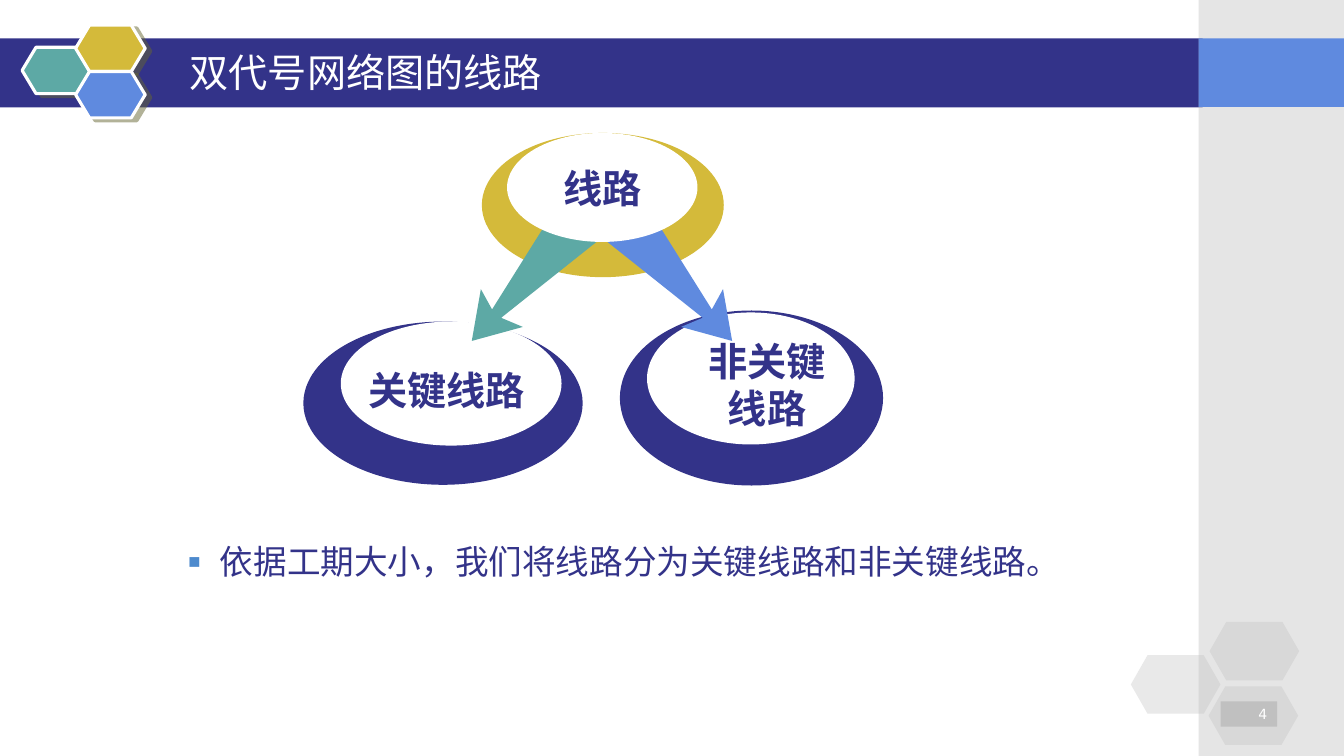
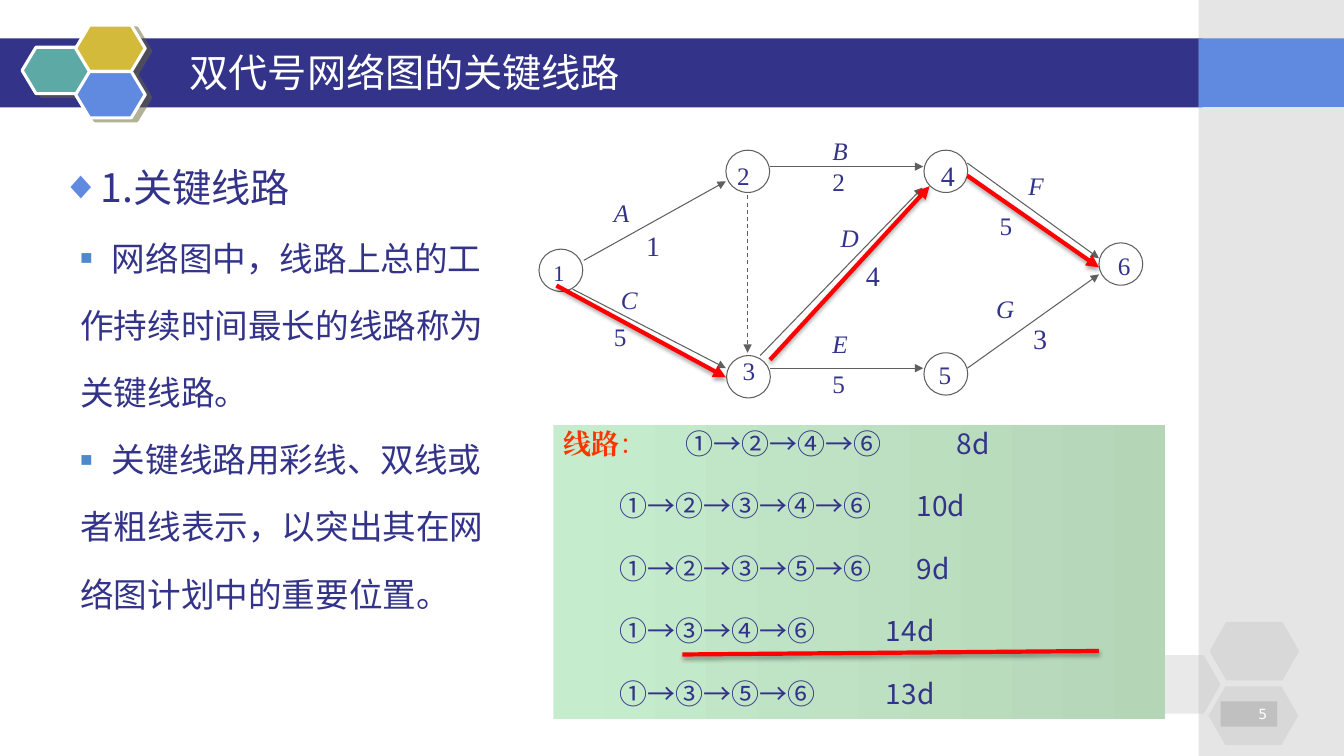
from dataclasses import dataclass

from lxml import etree
from pptx import Presentation
from pptx.dml.color import RGBColor
from pptx.enum.dml import MSO_LINE
from pptx.enum.shapes import MSO_CONNECTOR, MSO_SHAPE
from pptx.enum.text import MSO_ANCHOR, MSO_AUTO_SIZE, PP_ALIGN
from pptx.oxml.ns import qn
from pptx.util import Pt

RECTANGLE, ELLIPSE, HEXAGON = MSO_SHAPE.RECTANGLE, MSO_SHAPE.OVAL, MSO_SHAPE.HEXAGON
LEFT, CENTER, RIGHT = PP_ALIGN.LEFT, PP_ALIGN.CENTER, PP_ALIGN.RIGHT
TOP, MIDDLE = MSO_ANCHOR.TOP, MSO_ANCHOR.MIDDLE
STRAIGHT, DASH, NO_FIT = MSO_CONNECTOR.STRAIGHT, MSO_LINE.DASH, MSO_AUTO_SIZE.NONE

Point = tuple[float, float]
Box = tuple[float, float, float, float]


@dataclass(frozen=True)
class Theme:
    """Colours, fonts and type sizes of the deck."""
    navy: str = "333389"
    blue: str = "5F8ADF"
    teal: str = "5DA9A5"
    gold: str = "D4BA3A"
    white: str = "FFFFFF"
    silver: str = "C0C0C0"
    bullet: str = "4D8ACD"
    line: str = "5F5F5F"
    red: str = "FF0000"
    orange: str = "FF3300"
    panel: tuple[str, str] = ("C5EDCD", "B5D5B7")
    sans: str = "Noto Sans CJK SC"
    serif: str = "Times New Roman"
    number_font: str = "DejaVu Sans"
    heading: float = 28
    text: float = 24
    route: float = 20
    label: float = 18
    number: float = 10


THEME = Theme()


@dataclass(frozen=True)
class Shadow:
    """Outer shadow of a shape or line."""
    color: str
    alpha: int
    blur: float
    distance: float
    angle: int


HEXAGON_SHADOW = Shadow("666633", 50, 0, 4.5, 27)
LINE_SHADOW = Shadow("000000", 35, 3.1, 1.8, 90)


@dataclass(frozen=True)
class Ring:
    """Coloured ellipse with a white centre and a caption."""
    color: str
    outer: Box
    inner: Box
    caption_box: Box
    lines: tuple[str, ...]


@dataclass(frozen=True)
class Label:
    """Short text in the network."""
    text: str
    at: Point
    size: float = THEME.label
    italic: bool = False


@dataclass(frozen=True)
class Node:
    """Numbered event circle."""
    at: Point
    label: Label


@dataclass(frozen=True)
class Activity:
    """Arrow between two events with its labels."""
    start: Point
    end: Point
    labels: tuple[Label, ...] = ()
    dash: bool = False


@dataclass(frozen=True)
class Item:
    """Body paragraph with its bullet and indents."""
    text: str
    level: int = 1
    margin: float = 13.5
    indent: float = 0
    mark: str = ""


@dataclass(frozen=True)
class Route:
    """Path through the network with its length and tab stops."""
    nodes: str
    days: str
    stops: Point
    heading: str = ""


ARROW = ((403, 139), (434, 166.5), (358, 227), (373.5, 233.5), (337, 243.5),
         (343.5, 206.5), (351.5, 221))
MIRROR_SUM = 860
RINGS = (
    Ring(THEME.navy, (216.7, 229.7, 199.5, 116.6), (243.4, 229.7, 157.7, 88.6),
         (252, 257.8, 134, 41), ("关键线路",)),
    Ring(THEME.navy, (442.8, 221.8, 188, 125), (462.2, 223.2, 148.3, 94.3),
         (490.3, 237.6, 115.2, 75), ("非关键", "线路")),
    Ring(THEME.gold, (344.2, 95, 172.8, 103), (362.2, 95, 136, 77.8),
         (373.7, 113.8, 113.8, 41), ("线路",)),
)
NODES = (
    Node((385, 178), Label("1", (395.3, 185), 16)),
    Node((518.5, 107.3), Label("2", (526.5, 114.5))),
    Node((519, 254), Label("3", (530.5, 254))),
    Node((660, 107.3), Label("4", (672, 113), THEME.route)),
    Node((660, 252), Label("5", (670.5, 257))),
    Node((785, 173.5), Label("6", (798.5, 178.5))),
)
ACTIVITIES = (
    Activity((417, 186), (518.5, 129.5), (Label("A", (438.5, 141), italic=True), Label("1", (461.5, 163.5), 20))),
    Activity((550, 119), (659.5, 119), (Label("B", (594.5, 96.5), italic=True), Label("2", (594.5, 119)))),
    Activity((409, 206.5), (518.5, 263), (Label("C", (443.5, 203), italic=True), Label("5", (438.5, 229.5)))),
    Activity((543, 254), (659, 134), (Label("D", (600.5, 159), italic=True), Label("4", (618.5, 184.5), 20))),
    Activity((550, 263), (659.5, 263), (Label("E", (594.5, 234.5), italic=True), Label("5", (594.5, 263)))),
    Activity((691, 116.5), (785, 184.5), (Label("F", (734.5, 121.5), italic=True), Label("5", (714, 150.5)))),
    Activity((691, 263), (785, 196), (Label("G", (711.5, 209.5), italic=True), Label("3", (738, 229.5), 20))),
    Activity((534, 139.5), (534, 252), dash=True),
)
CRITICAL = (((397.5, 204), (518.5, 269.5)), ((550, 257), (664, 133)), ((691, 125.5), (785, 191)))
ROUTES = (
    Route("①→②→④→⑥", "8d", (87, 281), "线路"),
    Route("①→②→③→④→⑥", "10d", (40, 252.5)),
    Route("①→②→③→⑤→⑥", "9d", (40, 252.5)),
    Route("①→③→④→⑥", "14d", (40, 230.5)),
    Route("①→③→⑤→⑥", "13d", (40, 230.5)),
)
SUMMARY = (Item("依据工期大小，我们将线路分为关键线路和非关键线路。", 1, 58.5, -22.5, "■"),)
DEFINITION = (
    Item("1.关键线路", 0, 27, -27, "◆"),
    Item("网络图中，线路上总的工", 1, 36, -22.5, "■"),
    Item("作持续时间最长的线路称为"),
    Item("关键线路。"),
    Item("关键线路用彩线、双线或", 1, 36, -22.5, "■"),
    Item("者粗线表示，以突出其在网"),
    Item("络图计划中的重要位置。"),
)


def apply(target, values: dict) -> None:
    """Set every named attribute on the target."""
    for name, value in values.items():
        setattr(target, name, value)


def add_xml(parent, tag: str, **attributes):
    """Append a drawing element with its attributes."""
    return etree.SubElement(parent, qn(f"a:{tag}"), {key: str(value) for key, value in attributes.items()})


def place(shape, box: Box) -> None:
    """Move and size a shape."""
    apply(shape, dict(zip(("left", "top", "width", "height"), map(Pt, box))))


def add_shadow(effects, shadow: Shadow) -> None:
    """Put an outer shadow into an effect list."""
    outer = add_xml(effects, "outerShdw", blurRad=Pt(shadow.blur), dist=Pt(shadow.distance),
                    dir=shadow.angle * 60000, algn="ctr", rotWithShape=0)
    add_xml(add_xml(outer, "srgbClr", val=shadow.color), "alpha", val=shadow.alpha * 1000)


def paint(shape, color: str, alpha: int = 100) -> None:
    """Give a shape a flat fill without line or shadow."""
    shape.shadow.inherit = False
    shape.line.fill.background()
    shape.fill.solid()
    shape.fill.fore_color.rgb = RGBColor.from_string(color)
    if alpha < 100:
        add_xml(shape.element.spPr.find(qn("a:solidFill"))[0], "alpha", val=alpha * 1000)


def add_block(slide, kind, box: Box, color: str, alpha: int = 100):
    """Draw a filled preset shape."""
    shape = slide.shapes.add_shape(kind, *map(Pt, box))
    paint(shape, color, alpha)
    return shape


def add_span(para, text: str, size: float, color: str = THEME.navy, font: str = THEME.sans,
             bold: bool = False, italic: bool = False) -> None:
    """Add a formatted run to a paragraph."""
    span = para.add_run()
    span.text = text
    apply(span.font, {"name": font, "size": Pt(size), "bold": bold, "italic": italic})
    span.font.color.rgb = RGBColor.from_string(color)
    add_xml(span.font._element, "ea", typeface=font)


def set_frame(frame, anchor=TOP, inset: Point = (7.2, 3.6)) -> None:
    """Set wrapping, anchor and insets of a text frame."""
    across, down = map(Pt, inset)
    apply(frame, {"word_wrap": True, "auto_size": NO_FIT, "vertical_anchor": anchor,
                  "margin_left": across, "margin_right": across, "margin_top": down, "margin_bottom": down})


def add_line(slide, start: Point, end: Point, color: str = THEME.line, width: float = 0.75,
             arrow: bool = True, dash: bool = False, shadow: Shadow | None = None) -> None:
    """Draw a straight line, with an arrowhead if wanted."""
    connector = slide.shapes.add_connector(STRAIGHT, *map(Pt, start + end))
    connector.line.color.rgb = RGBColor.from_string(color)
    connector.line.width = Pt(width)
    if dash:
        connector.line.dash_style = DASH
    if arrow:
        add_xml(connector.line._get_or_add_ln(), "tailEnd", type="triangle")
    effects = add_xml(connector.element.spPr, "effectLst")
    if shadow:
        add_shadow(effects, shadow)


def build_frame(layout, slide) -> None:
    """Draw the bands and hexagons and move them to the layout."""
    add_block(slide, RECTANGLE, (0, 27.4, 859, 49.3), THEME.navy)
    add_block(slide, RECTANGLE, (856.2, 0, 103.8, 540), THEME.silver, 40)
    add_block(slide, RECTANGLE, (856.2, 27.4, 103.8, 49), THEME.blue)
    for left, top, color in ((15.8, 33.8, THEME.teal), (54, 18, THEME.gold), (54, 51.1, THEME.blue)):
        hexagon = add_block(slide, HEXAGON, (left, top, 49.7, 33.1), color)
        hexagon.adjustments[0] = 0.3
        hexagon.line.color.rgb = RGBColor.from_string(THEME.white)
        hexagon.line.width = Pt(2.25)
        add_shadow(hexagon.element.spPr.find(qn("a:effectLst")), HEXAGON_SHADOW)
    for left, top in ((807.8, 468), (864, 444.2), (863.3, 490.3)):
        add_block(slide, HEXAGON, (left, top, 64, 41.8), THEME.silver, 35).adjustments[0] = 0.286
    drawn = [shape for shape in slide.shapes if not shape.is_placeholder]
    for index, shape in enumerate(drawn, start=2):
        layout.shapes.element.insert(index, shape.element)


def fill_page(slide, title: str, number: int, body_box: Box, items: tuple[Item, ...]) -> None:
    """Fill title, body and page number."""
    heading, body = slide.shapes.title, slide.placeholders[1]
    place(heading, (128.2, 30.2, 696, 41.8))
    set_frame(heading.text_frame, MIDDLE)
    heading.text_frame.paragraphs[0].alignment = LEFT
    add_span(heading.text_frame.paragraphs[0], title, THEME.heading, THEME.white)
    place(body, body_box)
    set_frame(body.text_frame)
    for index, item in enumerate(items):
        para = body.text_frame.add_paragraph() if index else body.text_frame.paragraphs[0]
        apply(para, {"level": item.level, "alignment": LEFT, "line_spacing": 1.5})
        props = para._p.get_or_add_pPr()
        props.set("marL", str(Pt(item.margin)))
        props.set("indent", str(Pt(item.indent)))
        if item.mark:
            color = THEME.bullet if item.level else THEME.blue
            add_xml(add_xml(props, "buClr"), "srgbClr", val=color)
            add_xml(props, "buSzPct", val=60000 if item.level else 100000)
            add_xml(props, "buChar", char=item.mark)
        else:
            add_xml(props, "buNone")
        add_span(para, item.text, THEME.text if item.level else THEME.heading)
    badge = add_block(slide, RECTANGLE, (872, 501, 40.3, 18), THEME.silver)
    set_frame(badge.text_frame, MIDDLE)
    badge.text_frame.paragraphs[0].alignment = RIGHT
    add_span(badge.text_frame.paragraphs[0], str(number), THEME.number, THEME.white, THEME.number_font)


def draw_arrow(slide, points: tuple[Point, ...], color: str) -> None:
    """Draw a tapering arrow outline."""
    corners = [(Pt(x), Pt(y)) for x, y in points]
    builder = slide.shapes.build_freeform(*corners[0])
    builder.add_line_segments(corners[1:])
    paint(builder.convert_to_shape(), color)


def draw_rings(slide) -> None:
    """Draw the rings, with the arrows under the last centre."""
    for ring in RINGS:
        add_block(slide, ELLIPSE, ring.outer, ring.color)
        if ring is RINGS[-1]:
            draw_arrow(slide, tuple((MIRROR_SUM - x, y) for x, y in ARROW), THEME.blue)
            draw_arrow(slide, ARROW, THEME.teal)
        add_block(slide, ELLIPSE, ring.inner, THEME.white)
        frame = slide.shapes.add_textbox(*map(Pt, ring.caption_box)).text_frame
        set_frame(frame)
        for index, line in enumerate(ring.lines):
            para = frame.add_paragraph() if index else frame.paragraphs[0]
            para.alignment = CENTER
            add_span(para, line, THEME.heading, bold=True)


def draw_label(slide, label: Label) -> None:
    """Write one network label."""
    frame = slide.shapes.add_textbox(*map(Pt, label.at + (15.8, 22.3))).text_frame
    set_frame(frame, inset=(0, 0))
    add_span(frame.paragraphs[0], label.text, label.size, font=THEME.serif, italic=label.italic)


def draw_network(slide) -> None:
    """Draw events, activities and the critical path."""
    for node in NODES:
        circle = add_block(slide, ELLIPSE, node.at + (31.3, 30.2), THEME.white)
        circle.fill.background()
        circle.line.color.rgb = RGBColor.from_string(THEME.line)
        circle.line.width = Pt(0.75)
        draw_label(slide, node.label)
    for activity in ACTIVITIES:
        add_line(slide, activity.start, activity.end, dash=activity.dash)
        for label in activity.labels:
            draw_label(slide, label)
    for start, end in CRITICAL:
        add_line(slide, start, end, THEME.red, 3, shadow=LINE_SHADOW)


def draw_routes(slide) -> None:
    """List the routes on a green panel and underline the longest."""
    panel = add_block(slide, RECTANGLE, (395.3, 303.8, 437, 209.5), THEME.panel[0])
    panel.fill.gradient()
    panel.fill.gradient_angle = 0
    for stop, color in zip(panel.fill.gradient_stops, THEME.panel):
        stop.color.rgb = RGBColor.from_string(color)
    set_frame(panel.text_frame)
    for index, route in enumerate(ROUTES):
        para = panel.text_frame.add_paragraph() if index else panel.text_frame.paragraphs[0]
        apply(para, {"alignment": LEFT, "line_spacing": 0.9, "space_before": Pt(23 if index else 0)})
        tabs = add_xml(para._p.get_or_add_pPr(), "tabLst")
        for stop in route.stops:
            add_xml(tabs, "tab", pos=Pt(stop), algn="l")
        if route.heading:
            add_span(para, route.heading, THEME.route, THEME.orange, THEME.serif, bold=True)
            add_span(para, "：", THEME.route, THEME.orange, THEME.serif)
        add_span(para, f"\t{route.nodes}\t{route.days}", THEME.route)
    add_line(slide, (487.5, 467.5), (785, 465), THEME.red, 3, arrow=False, shadow=LINE_SHADOW)


def main() -> None:
    """Build and save the deck."""
    deck = Presentation()
    apply(deck, {"slide_width": Pt(960), "slide_height": Pt(540)})
    layout = deck.slide_layouts[1]
    overview, critical = (deck.slides.add_slide(layout) for _ in range(2))
    build_frame(layout, overview)
    fill_page(overview, "双代号网络图的线路", 4, (91.4, 368.6, 732, 115), SUMMARY)
    draw_rings(overview)
    fill_page(critical, "双代号网络图的关键线路", 5, (36.7, 96.5, 340, 385), DEFINITION)
    draw_network(critical)
    draw_routes(critical)
    deck.save("out.pptx")


if __name__ == "__main__":
    main()
